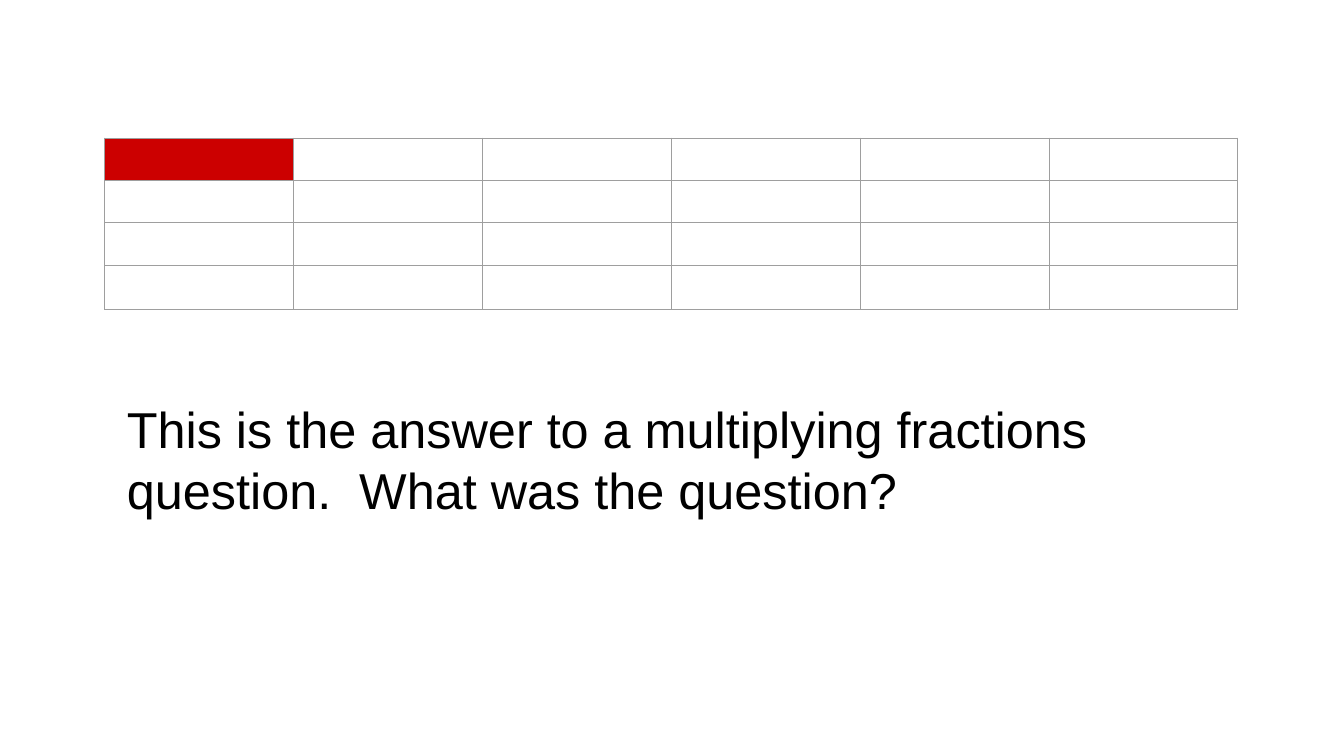
from lxml import etree
from pptx import Presentation
from pptx.dml.color import RGBColor
from pptx.enum.text import MSO_ANCHOR, PP_ALIGN
from pptx.oxml.ns import qn
from pptx.util import Inches, Pt

TOP, LEFT = MSO_ANCHOR.TOP, PP_ALIGN.LEFT

# Content
QUESTION = "This is the answer to a multiplying fractions question.  What was the question?"
COLUMNS = 6
ROW_HEIGHTS = [0.42, 0.42, 0.42, 0.44]
COLUMN_WIDTH = 1.873
SHADED = {(0, 0)}
COLORS = {"shaded": "CC0000", "grid": "9E9E9E", "text": "000000"}
FRAME_FORMAT = {
    "word_wrap": True, "vertical_anchor": TOP,
    "margin_left": Inches(0.1), "margin_right": Inches(0.1),
    "margin_top": Inches(0.1), "margin_bottom": Inches(0.1),
}
FONT_FORMAT = {"name": "Arial", "size": Pt(36)}


def draw_borders(cell):
    properties = cell._tc.get_or_add_tcPr()
    for index, side in enumerate(("lnL", "lnR", "lnT", "lnB")):
        border = etree.Element(qn(f"a:{side}"), w=str(Pt(0.75)))
        fill = etree.SubElement(border, qn("a:solidFill"))
        etree.SubElement(fill, qn("a:srgbClr"), val=COLORS["grid"])
        properties.insert(index, border)


deck = Presentation()
deck.slide_width, deck.slide_height = Inches(13.33), Inches(7.5)
slide = deck.slides.add_slide(deck.slide_layouts[6])

# Fraction grid
grid = slide.shapes.add_table(
    len(ROW_HEIGHTS), COLUMNS, Inches(1.04), Inches(1.37),
    Inches(COLUMNS * COLUMN_WIDTH), Inches(sum(ROW_HEIGHTS))).table
grid.first_row = grid.horz_banding = False
for column in grid.columns:
    column.width = Inches(COLUMN_WIDTH)
for r, height in enumerate(ROW_HEIGHTS):
    grid.rows[r].height = Inches(height)
    for c in range(COLUMNS):
        cell = grid.cell(r, c)
        if (r, c) in SHADED:
            cell.fill.solid()
            cell.fill.fore_color.rgb = RGBColor.from_string(COLORS["shaded"])
        else:
            cell.fill.background()
        draw_borders(cell)

# Question
frame = slide.shapes.add_textbox(
    Inches(1.16), Inches(3.85), Inches(10.93), Inches(2.45)).text_frame
for name, value in FRAME_FORMAT.items():
    setattr(frame, name, value)
paragraph = frame.paragraphs[0]
paragraph.alignment = LEFT
question = paragraph.add_run()
question.text = QUESTION
for name, value in FONT_FORMAT.items():
    setattr(question.font, name, value)
question.font.color.rgb = RGBColor.from_string(COLORS["text"])

deck.save("out.pptx")
